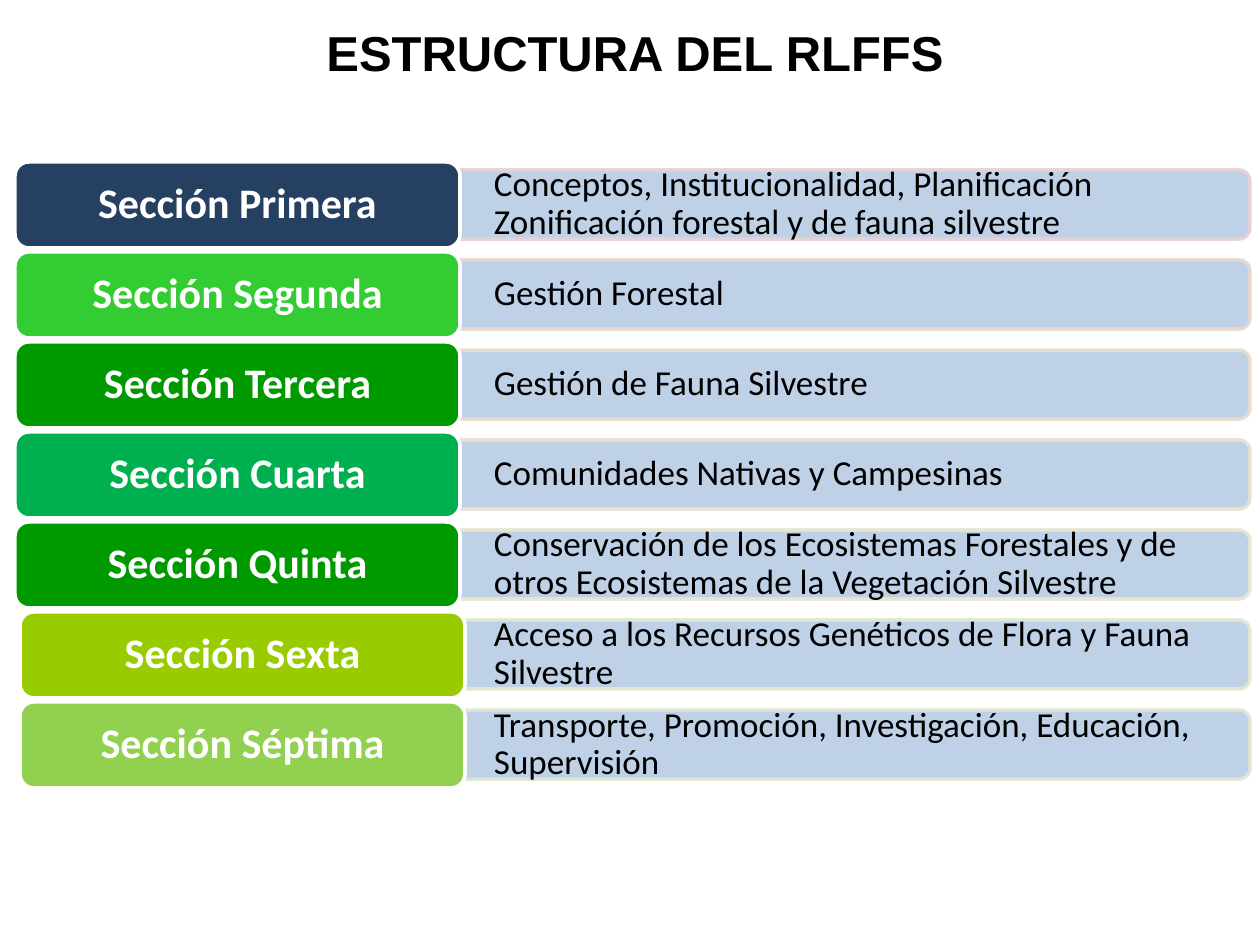
import math

from lxml import etree
from pptx import Presentation
from pptx import util as u
from pptx.dml.color import RGBColor
from pptx.enum import text
from pptx.oxml import ns

PX = 914400 / 126
ROW_PITCH = 90
ARC_STEPS = 8

SECTIONS = [
    ("Sección Primera", "254061", 15, "E8D0D0",
     "Conceptos, Institucionalidad, Planificación Zonificación forestal y de fauna silvestre"),
    ("Sección Segunda", "33CC33", 15, "E8D6D0", "Gestión Forestal"),
    ("Sección Tercera", "009900", 15, "E8DCD0", "Gestión de Fauna Silvestre"),
    ("Sección Cuarta", "00B050", 15, "E8E1D1", "Comunidades Nativas y Campesinas"),
    ("Sección Quinta", "009900", 15, "E7E6D1",
     "Conservación de los Ecosistemas Forestales y de otros Ecosistemas de la Vegetación Silvestre"),
    ("Sección Sexta", "99CC00", 20, "E3E7D1",
     "Acceso a los Recursos Genéticos de Flora y Fauna Silvestre"),
    ("Sección Séptima", "92D050", 20, "DEE7D1",
     "Transporte, Promoción, Investigación, Educación, Supervisión"),
]


def px(length):
    """Turn a length in px into EMU."""
    return u.Emu(round(length * PX))


def paint(color_format, hex_color, opacity=100):
    """Set a solid fill to a hex colour and an opacity in percent."""
    color_format.solid()
    color_format.fore_color.rgb = RGBColor.from_string(hex_color)
    if opacity < 100:
        srgb = color_format._xPr.find(".//" + ns.qn("a:srgbClr"))
        etree.SubElement(srgb, ns.qn("a:alpha"), val=str(opacity * 1000))


def rounded_outline(box, left_radius, right_radius):
    """Return the clockwise points of a box with rounded left and right corners."""
    left, top, width, height = box
    right, bottom = left + width, top + height
    corners = [
        (left + left_radius, top + left_radius, left_radius, 180),
        (right - right_radius, top + right_radius, right_radius, 270),
        (right - right_radius, bottom - right_radius, right_radius, 0),
        (left + left_radius, bottom - left_radius, left_radius, 90),
    ]
    points = []
    for x, y, radius, start in corners:
        steps = ARC_STEPS if radius else 0
        for step in range(steps + 1):
            angle = math.radians(start + 90 * step / ARC_STEPS)
            points.append((px(x + radius * math.cos(angle)), px(y + radius * math.sin(angle))))
    return points


def add_panel(slide, box, radii, fill, line, opacity=100):
    """Draw a panel with the given left and right corner radii."""
    start, *rest = rounded_outline(box, *radii)
    builder = slide.shapes.build_freeform(*start)
    builder.add_line_segments(rest, close=True)
    panel = builder.convert_to_shape()
    panel.shadow.inherit = False
    paint(panel.fill, fill, opacity)
    paint(panel.line.fill, line, opacity)
    panel.line.width = u.Pt(2)
    return panel


def write(shape, words, font_name, size, color, bold, align, anchor, margins):
    """Fill a shape with one formatted paragraph."""
    frame = shape.text_frame
    frame.text = words
    frame.word_wrap = True
    frame.vertical_anchor = anchor
    frame.margin_left, frame.margin_top, frame.margin_right, frame.margin_bottom = map(px, margins)
    paragraph = frame.paragraphs[0]
    paragraph.alignment = align
    font = paragraph.runs[0].font
    font.name, font.size, font.bold = font_name, u.Pt(size), bold
    font.color.rgb = RGBColor.from_string(color)
    return paragraph


def add_title(slide, box):
    """Place the slide title."""
    title = slide.shapes.title
    title.left, title.top, title.width, title.height = map(px, box)
    write(title, "ESTRUCTURA DEL RLFFS", "Arial", 28, "000000", True,
          text.PP_ALIGN.CENTER, text.MSO_ANCHOR.TOP, (13, 6, 13, 6))


def add_section(slide, top, name, name_fill, name_left, border, content):
    """Place one section row: its content panel and the name over it."""
    detail = add_panel(slide, (460, top + 8, 790, 69), (0, 11), "B9CDE5", border, 90)
    write(detail, content, "Calibri", 20, "000000", False, text.PP_ALIGN.LEFT,
          text.MSO_ANCHOR.MIDDLE, (34, 20, 38, 20)).line_spacing = 0.9
    label = add_panel(slide, (name_left, top, 445, 86), (14, 14), name_fill, "FFFFFF")
    write(label, name, "Calibri", 24, "FFFFFF", True, text.PP_ALIGN.CENTER,
          text.MSO_ANCHOR.MIDDLE, (16, 10, 16, 10)).line_spacing = 0.9


def add_sections(slide, top):
    """Stack the section rows at an equal pitch."""
    for row, section in enumerate(SECTIONS):
        add_section(slide, top + row * ROW_PITCH, *section)


def main():
    """Build and save the slide."""
    prs = Presentation()
    prs.slide_width, prs.slide_height = px(1260), px(945)
    slide = prs.slides.add_slide(prs.slide_layouts[5])
    add_title(slide, (5, 16, 1260, 72))
    add_sections(slide, 162)
    prs.save("out.pptx")


if __name__ == "__main__":
    main()
